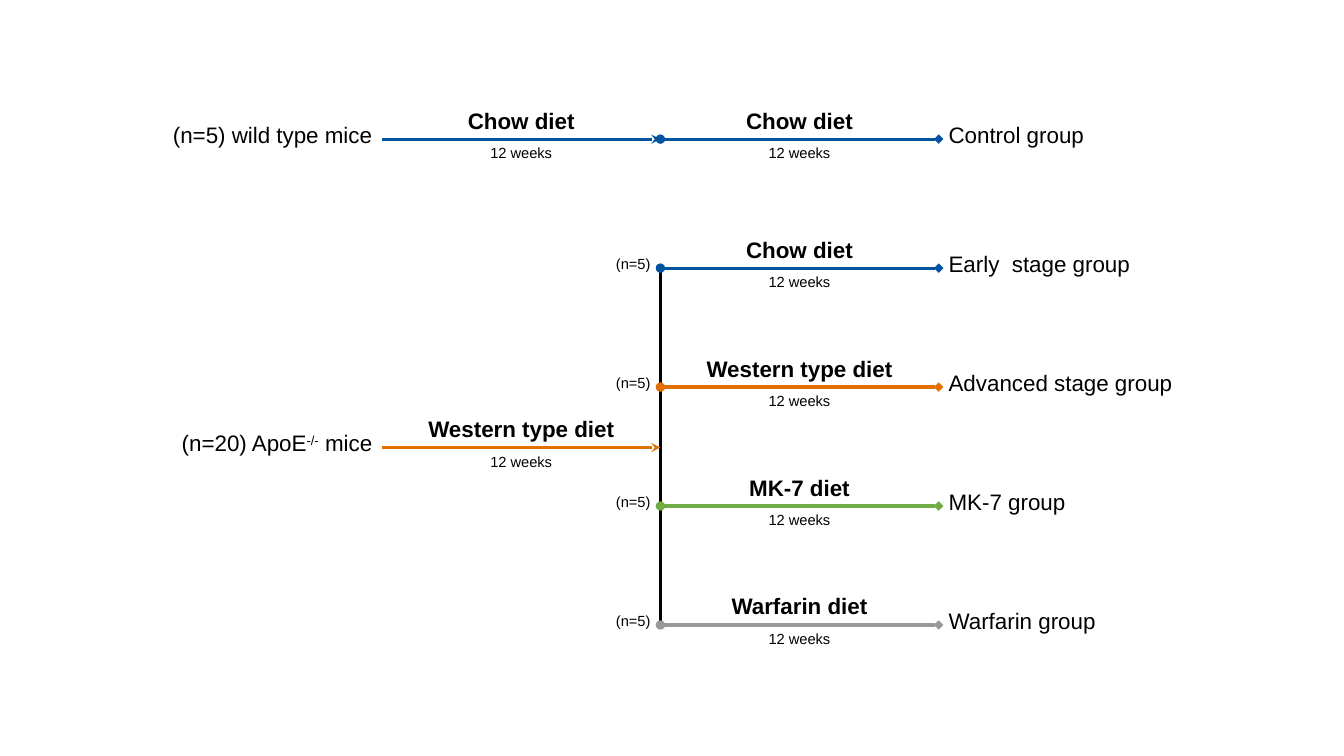
import pptx
import pptx.dml.color
import pptx.enum.shapes
import pptx.enum.text
import pptx.oxml.ns
import pptx.util
from lxml import etree

COLORS = {"text": "000000", "chow": "00549F", "western": "E17000",
          "mk7": "70AD47", "warfarin": "999999"}
FONT = "Arial"
SPAN = 2.76                       # width of one 12-week phase
START = 3.79
SPLIT = START + SPAN
END = SPLIT + SPAN
CONTROL_ROW, FIRST_ROW, ROW_STEP, SOURCE_ROW = 1.38, 2.66, 1.18, 4.44
ALIGN = pptx.enum.text.PP_ALIGN
ANCHOR = pptx.enum.text.MSO_ANCHOR


def add_line(slide, x1, y1, x2, y2, color, head=None, tail=None):
    line = slide.shapes.add_connector(
        pptx.enum.shapes.MSO_CONNECTOR.STRAIGHT,
        *(pptx.util.Inches(v) for v in (x1, y1, x2, y2)))
    line.line.width = pptx.util.Pt(2.25)
    line.line.color.rgb = pptx.dml.color.RGBColor.from_string(COLORS[color])
    ln = line.line._get_or_add_ln()
    for tag, kind in (("a:headEnd", head), ("a:tailEnd", tail)):
        if kind:
            etree.SubElement(ln, pptx.oxml.ns.qn(tag), type=kind)
    etree.SubElement(line._element.spPr, pptx.oxml.ns.qn("a:effectLst"))


def add_text(slide, x, y, width, height, text, size=16, align=ALIGN.CENTER,
             anchor=ANCHOR.TOP, bold=False):
    """Add a text box; parts between carets in text are superscript."""
    box = slide.shapes.add_textbox(
        *(pptx.util.Inches(v) for v in (x, y, width, height)))
    tf = box.text_frame
    tf.word_wrap = True
    tf.auto_size = pptx.enum.text.MSO_AUTO_SIZE.SHAPE_TO_FIT_TEXT
    tf.vertical_anchor = anchor
    p = tf.paragraphs[0]
    p.alignment = align
    p.font.name = FONT
    p.font.size = pptx.util.Pt(size)
    p.font.bold = bold
    p.font.color.rgb = pptx.dml.color.RGBColor.from_string(COLORS["text"])
    for i, part in enumerate(text.split("^")):
        r = p.add_run()
        r.text = part
        if i % 2:
            r.font._element.set("baseline", "30000")


def add_phase(slide, x, y, diet, color, head, tail):
    add_line(slide, x, y, x + SPAN, y, color, head, tail)
    add_text(slide, x, y - 0.37, SPAN, 0.37, diet, bold=True)
    add_text(slide, x, y, SPAN, 0.29, "12 weeks", size=10.5)


def add_source(slide, y, mice, diet, color):
    add_text(slide, START - 2.24, y - 0.23, 2.24, 0.37, mice,
             align=ALIGN.RIGHT, anchor=ANCHOR.MIDDLE)
    add_phase(slide, START, y, diet, color, None, "stealth")


def add_group(slide, y, diet, color, group):
    add_phase(slide, SPLIT, y, diet, color, "oval", "diamond")
    add_text(slide, END, y - 0.23, 2.49, 0.37, group,
             align=ALIGN.LEFT, anchor=ANCHOR.MIDDLE)


def main():
    prs = pptx.Presentation()
    prs.slide_width = pptx.util.Inches(13.33)
    prs.slide_height = pptx.util.Inches(7.5)
    slide = prs.slides.add_slide(prs.slide_layouts[6])

    branches = [("Chow diet", "chow", "Early  stage group"),
                ("Western type diet", "western", "Advanced stage group"),
                ("MK-7 diet", "mk7", "MK-7 group"),
                ("Warfarin diet", "warfarin", "Warfarin group")]
    last_row = FIRST_ROW + ROW_STEP * (len(branches) - 1)
    add_line(slide, SPLIT, FIRST_ROW, SPLIT, last_row, "text")

    add_source(slide, CONTROL_ROW, "(n=5) wild type mice", "Chow diet", "chow")
    add_group(slide, CONTROL_ROW, "Chow diet", "chow", "Control group")
    add_source(slide, SOURCE_ROW, "(n=20) ApoE^-/-^ mice",
               "Western type diet", "western")
    for i, (diet, color, group) in enumerate(branches):
        y = FIRST_ROW + i * ROW_STEP
        add_group(slide, y, diet, color, group)
        add_text(slide, SPLIT - 1.37, y - 0.18, 1.37, 0.28, "(n=5)",
                 size=10.5, align=ALIGN.RIGHT)
    prs.save("out.pptx")


if __name__ == "__main__":
    main()
